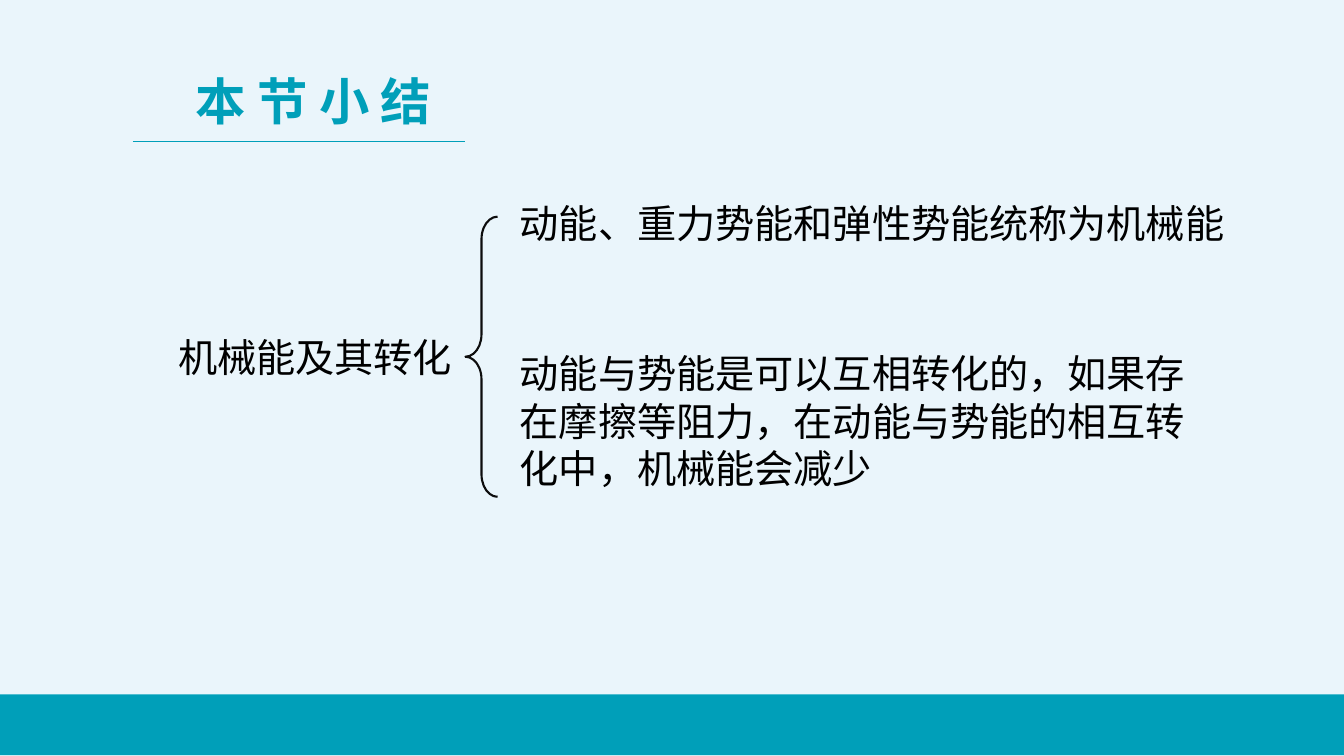
from lxml.etree import SubElement
from pptx import Presentation
from pptx.dml.color import RGBColor
from pptx.enum.shapes import MSO_CONNECTOR, MSO_SHAPE
from pptx.enum.text import MSO_ANCHOR, PP_ALIGN
from pptx.oxml.ns import qn
from pptx.util import Cm, Pt

COLOURS = {"background": "EAF5FB", "teal": "009FB9", "text": "000000", "brace": "0D0D0D"}
CHINESE_FONT = "Noto Sans CJK SC"


def colour(name):
    return RGBColor.from_string(COLOURS[name])


def write_text(shape, text, size, font_name, colour_name, bold=False):
    frame = shape.text_frame
    frame.word_wrap = True
    frame.vertical_anchor = MSO_ANCHOR.TOP
    frame.text = text
    paragraph = frame.paragraphs[0]
    paragraph.alignment = PP_ALIGN.LEFT
    font = paragraph.font
    font.size, font.name, font.bold = Pt(size), font_name, bold
    font.color.rgb = colour(colour_name)
    # Chinese characters take their font from the East Asian slot
    properties = paragraph.runs[0].font
    properties.name = font_name
    run_properties = paragraph.runs[0]._r.get_or_add_rPr()
    SubElement(run_properties, qn("a:ea"), typeface=CHINESE_FONT)


def add_title(slide, text):
    title = slide.shapes.title
    title.left, title.top, title.width, title.height = Cm(4.67), Cm(1.63), Cm(9.42), Cm(1.8)
    write_text(title, text, 36, "Arial", "teal", bold=True)


def add_statement(slide, text, left, top, width, height):
    box = slide.shapes.add_textbox(Cm(left), Cm(top), Cm(width), Cm(height))
    write_text(box, text, 28, CHINESE_FONT, "text")


def add_footer_band(slide):
    band = slide.shapes.add_shape(MSO_SHAPE.RECTANGLE, 0, Cm(17.5), Cm(33.87), Cm(1.53))
    band.shadow.inherit = False
    band.fill.solid()
    band.fill.fore_color.rgb = colour("teal")
    band.line.fill.background()


def add_title_rule(slide):
    rule = slide.shapes.add_connector(
        MSO_CONNECTOR.STRAIGHT, Cm(3.35), Cm(3.57), Cm(11.73), Cm(3.57))
    rule.line.color.rgb = colour("teal")
    rule.line.width = Pt(0.5)
    SubElement(rule._element.spPr, qn("a:effectLst"))


def add_brace(slide):
    brace = slide.shapes.add_shape(MSO_SHAPE.LEFT_BRACE, Cm(11.73), Cm(5.46), Cm(0.81), Cm(7.06))
    brace.shadow.inherit = False
    brace.adjustments[0] = 0.7
    brace.fill.background()
    brace.line.color.rgb = colour("brace")
    brace.line.width = Pt(1.5)


def main():
    presentation = Presentation()
    presentation.slide_width, presentation.slide_height = Cm(33.87), Cm(19.05)
    slide = presentation.slides.add_slide(presentation.slide_layouts[5])

    # Backdrop
    slide.background.fill.solid()
    slide.background.fill.fore_color.rgb = colour("background")
    add_footer_band(slide)

    # Heading
    add_title(slide, "本 节 小 结")
    add_title_rule(slide)

    # Topic and its two conclusions
    add_statement(slide, "机械能及其转化", 4.24, 8.28, 7.6, 1.45)
    add_brace(slide)
    add_statement(slide, "动能、重力势能和弹性势能统称为机械能", 12.85, 4.9, 20, 1.45)
    add_statement(slide, "动能与势能是可以互相转化的，如果存在摩擦等阻力，"
                  "在动能与势能的相互转化中，机械能会减少", 12.85, 8.69, 17.45, 3.84)

    presentation.save("out.pptx")


if __name__ == "__main__":
    main()
